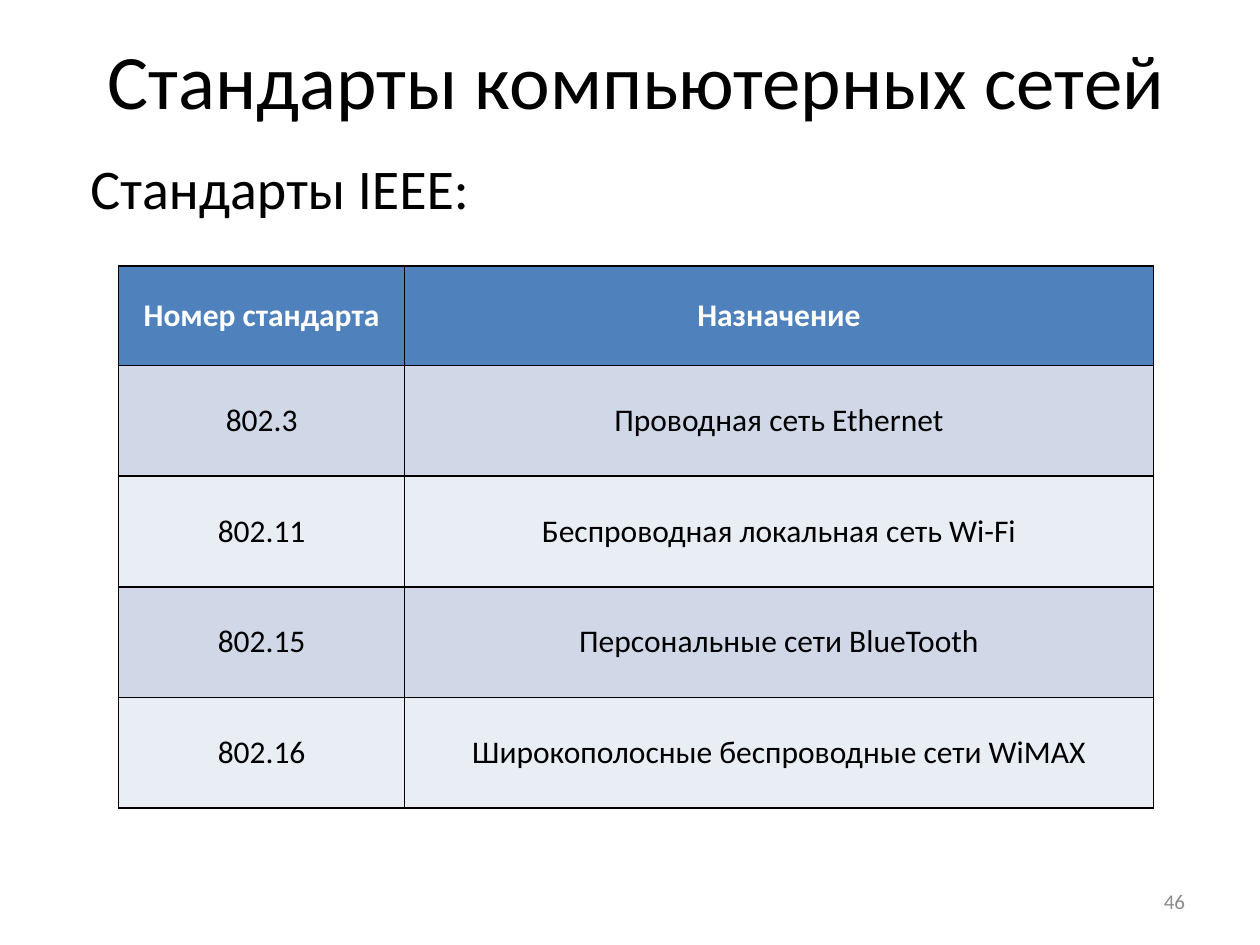
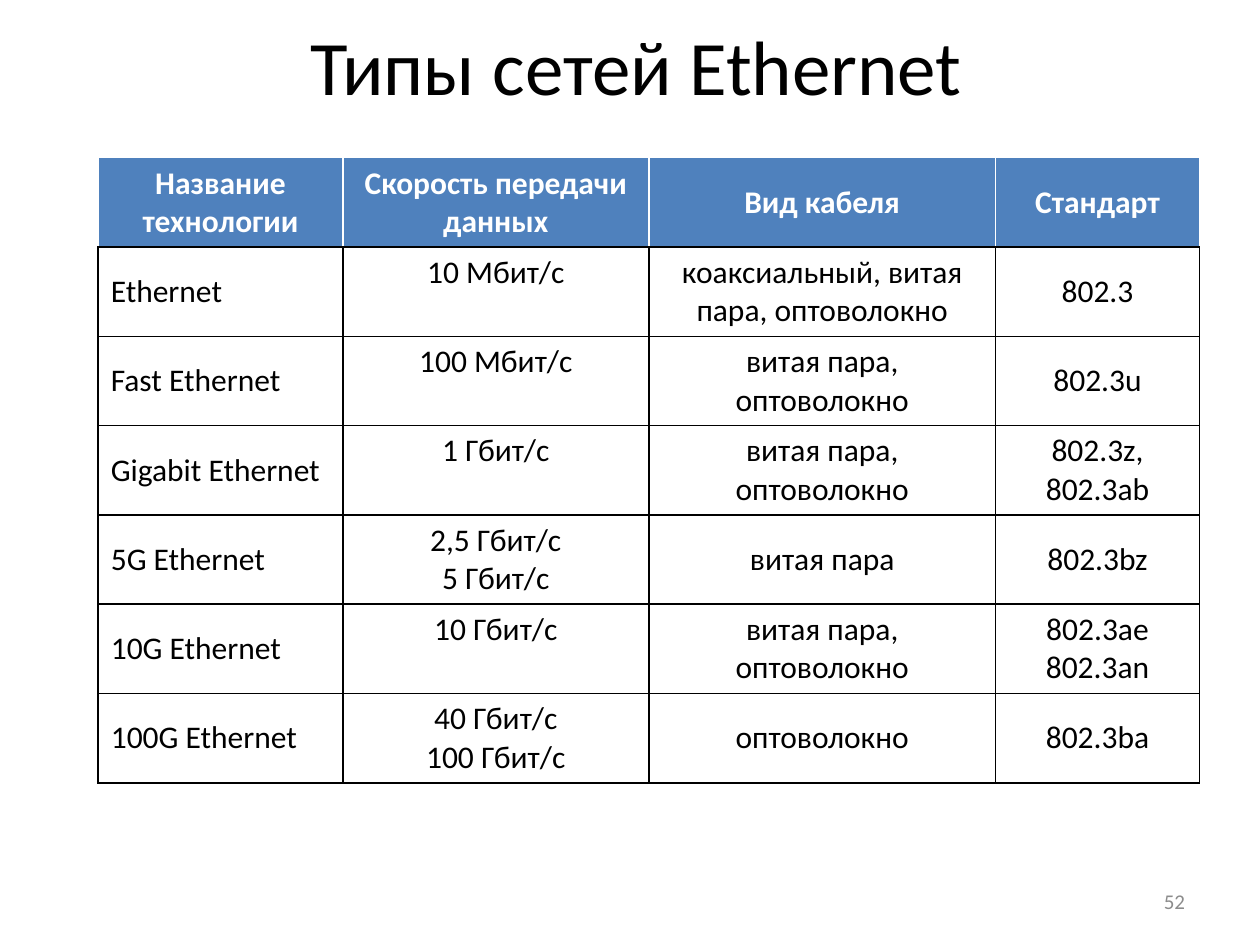
from dataclasses import dataclass
from typing import NamedTuple

from lxml import etree
from pptx import Presentation
from pptx import util as u
from pptx.dml import color as dml_color
from pptx.enum import text as t
from pptx.oxml import ns

FONT = "Calibri"
BLACK, WHITE, GREY = "000000", "FFFFFF", "8C8C8C"
HEADER_BLUE, BAND_DARK, BAND_LIGHT = "4F81BD", "D0D8E8", "E9EDF4"
LEFT, CENTER, RIGHT = t.PP_ALIGN.LEFT, t.PP_ALIGN.CENTER, t.PP_ALIGN.RIGHT
TOP, MIDDLE = t.MSO_ANCHOR.TOP, t.MSO_ANCHOR.MIDDLE


class Box(NamedTuple):
    left: float
    top: float
    width: float
    height: float


class ColumnStyle(NamedTuple):
    width: float
    align: t.PP_ALIGN = CENTER
    anchor: t.MSO_ANCHOR = MIDDLE


@dataclass
class TableDesign:
    left: float
    top: float
    columns: list[ColumnStyle]
    header_height: float
    row_height: float
    rows: list[tuple[str, ...]]
    bands: tuple[str, ...] = ()
    header_border: str = BLACK


NUMBER_BOX = Box(18.21, 17.65, 5.93, 1.02)

STANDARDS = TableDesign(
    left=2.39, top=5.36,
    columns=[ColumnStyle(5.77), ColumnStyle(15.09)],
    header_height=2.01, row_height=2.23,
    bands=(BAND_DARK, BAND_LIGHT),
    rows=[
        ("Номер стандарта", "Назначение"),
        ("802.3", "Проводная сеть Ethernet"),
        ("802.11", "Беспроводная локальная сеть Wi-Fi"),
        ("802.15", "Персональные сети BlueTooth"),
        ("802.16", "Широкополосные беспроводные сети WiMAX"),
    ],
)

ETHERNET_TYPES = TableDesign(
    left=1.98, top=3.18,
    columns=[ColumnStyle(4.93, align=LEFT), ColumnStyle(6.17, anchor=TOP),
             ColumnStyle(6.99), ColumnStyle(4.11)],
    header_height=1.8, row_height=1.8,
    header_border=WHITE,
    rows=[
        ("Название технологии", "Скорость передачи данных", "Вид кабеля", "Стандарт"),
        ("Ethernet", "10 Мбит/с", "коаксиальный, витая пара, оптоволокно", "802.3"),
        ("Fast Ethernet", "100 Мбит/с", "витая пара, оптоволокно", "802.3u"),
        ("Gigabit Ethernet", "1 Гбит/с", "витая пара, оптоволокно", "802.3z,\n802.3ab"),
        ("5G Ethernet", "2,5 Гбит/с\n5 Гбит/с", "витая пара", "802.3bz"),
        ("10G Ethernet", "10 Гбит/с", "витая пара, оптоволокно", "802.3ae\n802.3an"),
        ("100G Ethernet", "40 Гбит/с\n100 Гбит/с", "оптоволокно", "802.3ba"),
    ],
)


def rgb(value: str) -> dml_color.RGBColor:
    return dml_color.RGBColor.from_string(value)


def write(frame, content: str, *, size: float = 18, color: str = BLACK,
          bold: bool = False, align: t.PP_ALIGN = CENTER) -> None:
    frame.word_wrap = True
    frame.text = content
    for paragraph in frame.paragraphs:
        properties = paragraph._p.get_or_add_pPr()
        properties.set("marL", "0")
        properties.set("indent", "0")
        etree.SubElement(properties, ns.qn("a:buNone"))
        paragraph.alignment = align
        paragraph.space_before = u.Pt(0)
        for run in paragraph.runs:
            run.font.name = FONT
            run.font.size = u.Pt(size)
            run.font.bold = bold
            run.font.color.rgb = rgb(color)


def place(shape, box: Box) -> None:
    shape.left, shape.top, shape.width, shape.height = map(u.Cm, box)


def set_border(cell, side: str, color: str) -> None:
    line = etree.SubElement(cell._tc.get_or_add_tcPr(), ns.qn(f"a:ln{side}"),
                            w=str(u.Pt(1)))
    fill = etree.SubElement(line, ns.qn("a:solidFill"))
    etree.SubElement(fill, ns.qn("a:srgbClr"), val=color)


def draw_cell(cell, content: str, row: int, column: ColumnStyle,
              design: TableDesign) -> None:
    header = row == 0
    for side in ("L", "R", "T", "B"):
        set_border(cell, side, design.header_border if header and side != "B" else BLACK)
    if header or design.bands:
        cell.fill.solid()
        band = HEADER_BLUE if header else design.bands[(row - 1) % len(design.bands)]
        cell.fill.fore_color.rgb = rgb(band)
    else:
        cell.fill.background()
    cell.vertical_anchor = MIDDLE if header else column.anchor
    write(cell.text_frame, content, color=WHITE if header else BLACK, bold=header,
          align=CENTER if header else column.align)


def draw_table(slide, design: TableDesign) -> None:
    heights = [design.header_height] + [design.row_height] * (len(design.rows) - 1)
    width = sum(column.width for column in design.columns)
    box = Box(design.left, design.top, width, sum(heights))
    table = slide.shapes.add_table(len(heights), len(design.columns),
                                   *map(u.Cm, box)).table
    table.horz_banding = False
    for index, column in enumerate(design.columns):
        table.columns[index].width = u.Cm(column.width)
    for row, (height, contents) in enumerate(zip(heights, design.rows)):
        table.rows[row].height = u.Cm(height)
        for index, content in enumerate(contents):
            draw_cell(table.cell(row, index), content, row, design.columns[index], design)


def add_slide(presentation, layout: int, title: str, title_height: float, number: int):
    slide = presentation.slides.add_slide(presentation.slide_layouts[layout])
    heading = slide.shapes.title
    place(heading, Box(1.4, 0, 22.86, title_height))
    heading.text_frame.vertical_anchor = MIDDLE
    write(heading.text_frame, title, size=44)
    label = slide.shapes.add_textbox(*map(u.Cm, NUMBER_BOX))
    label.text_frame.vertical_anchor = MIDDLE
    write(label.text_frame, str(number), size=12, color=GREY, align=RIGHT)
    return slide


def main() -> None:
    presentation = Presentation()
    presentation.slide_width, presentation.slide_height = u.Cm(25.4), u.Cm(19.05)

    slide = add_slide(presentation, 1, "Стандарты компьютерных сетей", 3.18, 46)
    body = slide.placeholders[1]
    place(body, Box(1.57, 2.97, 22.86, 15.29))
    write(body.text_frame, "Стандарты IEEE:", size=32, align=LEFT)
    draw_table(slide, STANDARDS)

    slide = add_slide(presentation, 5, "Типы сетей Ethernet", 2.62, 52)
    draw_table(slide, ETHERNET_TYPES)

    presentation.save("out.pptx")


if __name__ == "__main__":
    main()
